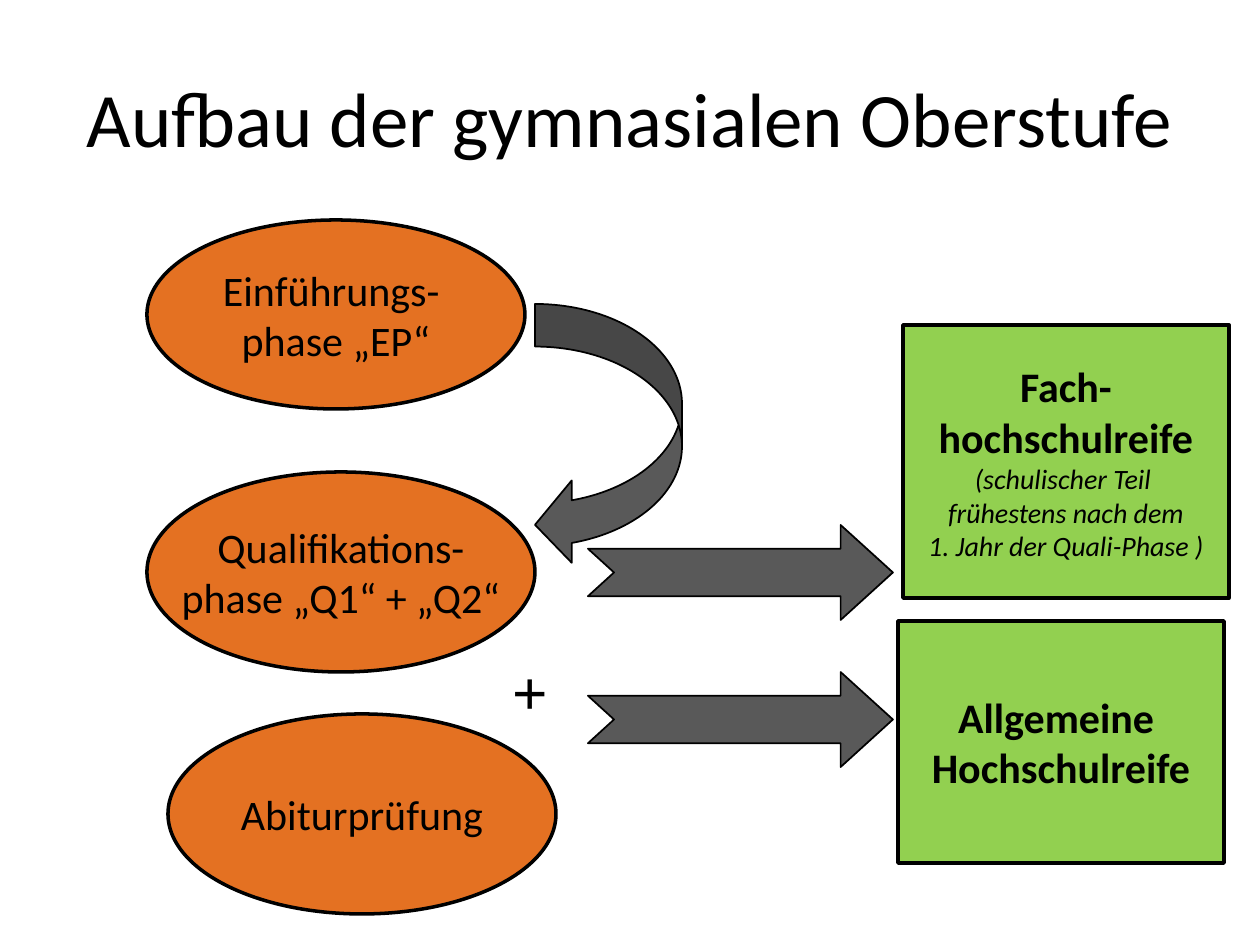
"""Build a slide on the stages of the upper school and the degrees they lead to."""
from dataclasses import dataclass

from pptx import Presentation
from pptx import util as u
from pptx.dml.color import RGBColor
from pptx.enum import shapes, text

SCALE = 914400 / 126
FONT = "Calibri"
INK = {"black": "000000", "orange": "E47122", "green": "92D050", "gray": "595959"}
KIND = shapes.MSO_SHAPE


@dataclass
class Line:
    words: str
    size: int = 24
    bold: bool = False
    slant: bool = False
    font: str = FONT


@dataclass
class Box:
    left: int
    top: int
    width: int
    height: int
    lines: tuple[Line, ...] = ()

    def area(self) -> list[int]:
        return [u.Emu(round(side * SCALE))
                for side in (self.left, self.top, self.width, self.height)]


STAGES = (
    Box(147, 220, 378, 189, (Line("Einführungs- \vphase „EP“"),)),
    Box(147, 472, 388, 200, (Line("Qualifikations-"), Line("phase „Q1“ + „Q2“"))),
    Box(168, 714, 388, 200, (Line("Abiturprüfung"),)),
)
GOALS = (
    Box(903, 325, 326, 273, (
        Line("Fach-\vhochschulreife", bold=True),
        Line("(schulischer Teil ", 16, slant=True),
        Line("frühestens nach dem", 16, slant=True),
        Line("1. Jahr der Quali-Phase )", 16, slant=True),
    )),
    Box(898, 621, 326, 242, (Line("Allgemeine \vHochschulreife", bold=True),)),
)
CURVE = Box(535, 304, 147, 262)
ARROWS = tuple(Box(588, top, 305, 95) for top in (672, 525))
PLUS = Box(462, 646, 136, 88, (Line("+", 36, bold=True, font="Times New Roman"),))
TITLE = Box(63, 38, 1134, 157, (Line("Aufbau der gymnasialen Oberstufe", 44),))


def tint(name: str) -> RGBColor:
    """Return a named colour."""
    return RGBColor.from_string(INK[name])


def write(frame, lines: tuple[Line, ...], wrap: bool = False) -> None:
    """Fill a text frame with centred lines."""
    frame.word_wrap = wrap
    frame.vertical_anchor = text.MSO_ANCHOR.MIDDLE
    for spot, line in enumerate(lines):
        para = frame.add_paragraph() if spot else frame.paragraphs[0]
        para.text = line.words
        para.alignment = text.PP_ALIGN.CENTER
        font = para.font
        font.name, font.size = line.font, u.Pt(line.size)
        font.bold, font.italic = line.bold, line.slant
        font.color.rgb = tint("black")


def draw(slide, kind, box: Box, fill: str, weight: int, bends: tuple = ()) -> None:
    """Add an outlined shape with its text."""
    shape = slide.shapes.add_shape(kind, *box.area())
    shape.shadow.inherit = False
    shape.fill.solid()
    shape.fill.fore_color.rgb = tint(fill)
    shape.line.color.rgb = tint("black")
    shape.line.width = u.Pt(weight)
    for spot, bend in enumerate(bends):
        shape.adjustments[spot] = bend
    if box.lines:
        write(shape.text_frame, box.lines)


def label(slide, box: Box) -> None:
    """Add a plain text box."""
    write(slide.shapes.add_textbox(*box.area()).text_frame, box.lines, wrap=True)


def main() -> None:
    """Build and save the slide."""
    deck = Presentation()
    deck.slide_width, deck.slide_height = u.Inches(10), u.Inches(7.5)
    slide = deck.slides.add_slide(deck.slide_layouts[6])
    draw(slide, KIND.CURVED_LEFT_ARROW, CURVE, "gray", 1, (0.29, 0.56, 0.25))
    for stage in STAGES:
        draw(slide, KIND.OVAL, stage, "orange", 2)
    for goal in GOALS:
        draw(slide, KIND.FLOWCHART_PROCESS, goal, "green", 2)
    label(slide, PLUS)
    for arrow in ARROWS:
        draw(slide, KIND.NOTCHED_RIGHT_ARROW, arrow, "gray", 1, (0.5, 0.55))
    label(slide, TITLE)
    deck.save("out.pptx")


if __name__ == "__main__":
    main()
